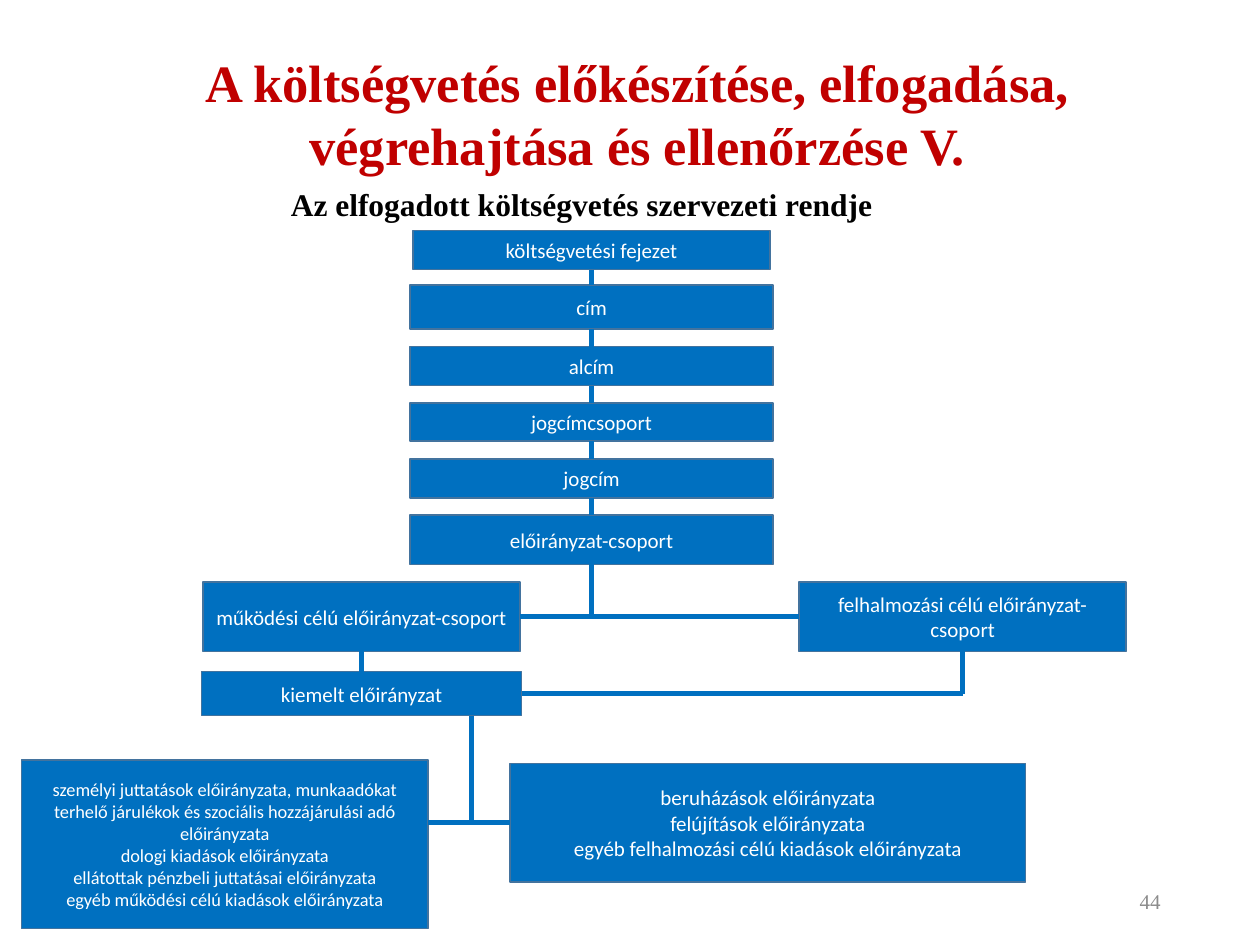
from collections import namedtuple
from itertools import pairwise

from lxml import etree
from pptx import Presentation
from pptx.dml.color import RGBColor
from pptx.enum.shapes import MSO_CONNECTOR, MSO_SHAPE
from pptx.enum.text import MSO_ANCHOR, PP_ALIGN
from pptx.oxml.ns import qn
from pptx.util import Inches, Pt

RECTANGLE = MSO_SHAPE.RECTANGLE
STRAIGHT = MSO_CONNECTOR.STRAIGHT
LEFT, CENTER, RIGHT = PP_ALIGN.LEFT, PP_ALIGN.CENTER, PP_ALIGN.RIGHT
TOP, MIDDLE = MSO_ANCHOR.TOP, MSO_ANCHOR.MIDDLE
TOP_SIDE, LEFT_SIDE, BOTTOM_SIDE, RIGHT_SIDE = range(4)

# The slide is a grid of 100 columns by 75 rows.
COLUMNS, ROWS = 100, 75
SLIDE_WIDTH, SLIDE_HEIGHT = Inches(10), Inches(7.5)
BLUE, EDGE, WHITE = "0070C0", "43739E", "FFFFFF"
RED, BLACK, GREY = "C00000", "000000", "8C8C8C"
SERIF, SANS = "Times New Roman", "Calibri"

LEVELS = [  # text, row in the chain, rows high, columns wide
    ("költségvetési fejezet", 0, 3.1, 28.3),
    ("cím", 4.3, 3.5, 28.8),
    ("alcím", 9.2, 3.1, 28.8),
    ("jogcímcsoport", 13.7, 3, 28.8),
    ("jogcím", 18.1, 3.1, 28.8),
    ("előirányzat-csoport", 22.6, 3.9, 28.8),
]
OPERATING_ITEMS = [
    "személyi juttatások előirányzata, munkaadókat terhelő járulékok "
    "és szociális hozzájárulási adó előirányzata",
    "dologi kiadások előirányzata",
    "ellátottak pénzbeli juttatásai előirányzata",
    "egyéb működési célú kiadások előirányzata",
]
CAPITAL_ITEMS = [
    "beruházások előirányzata",
    "felújítások előirányzata",
    "egyéb felhalmozási célú kiadások előirányzata",
]


class Box(namedtuple("Box", "left top width height")):
    def inner(self, left, top, width, height):
        return Box(self.left + left, self.top + top, width, height)

    def emu(self):
        return (across(self.left), down(self.top),
                across(self.width), down(self.height))


def across(columns):
    return round(SLIDE_WIDTH * columns / COLUMNS)


def down(rows):
    return round(SLIDE_HEIGHT * rows / ROWS)


def color(value):
    return RGBColor.from_string(value)


def write(shape, lines, size, font, ink, align, anchor, bold=False):
    frame = shape.text_frame
    frame.word_wrap = True
    frame.vertical_anchor = anchor
    frame.text = "\n".join(lines)
    for para in frame.paragraphs:
        para.alignment = align
        for span in para.runs:
            span.font.name = font
            span.font.size = Pt(size)
            span.font.bold = bold
            span.font.color.rgb = color(ink)


def add_label(page, box, text, size, ink, align, anchor=TOP, bold=True):
    shape = page.shapes.add_textbox(*box.emu())
    write(shape, [text], size, SERIF, ink, align, anchor, bold)


def add_node(page, box, lines, size=12):
    shape = page.shapes.add_shape(RECTANGLE, *box.emu())
    shape.shadow.inherit = False
    shape.fill.solid()
    shape.fill.fore_color.rgb = color(BLUE)
    shape.line.color.rgb = color(EDGE)
    shape.line.width = Pt(1)
    write(shape, lines, size, SANS, WHITE, CENTER, MIDDLE)
    return shape


def add_link(page, start, end):
    """Each end is a (shape, side) pair or an (x, y) point in EMU."""
    points = [(0, 0) if hasattr(place[0], "shape_id") else place
              for place in (start, end)]
    link = page.shapes.add_connector(STRAIGHT, *points[0], *points[1])
    for place, join in ((start, link.begin_connect), (end, link.end_connect)):
        if hasattr(place[0], "shape_id"):
            join(*place)
    link.line.color.rgb = color(BLUE)
    link.line.width = Pt(3)
    etree.SubElement(link._element.spPr, qn("a:effectLst"))


def middle_row(shape):
    return shape.top + shape.height // 2


def middle_column(shape):
    return shape.left + shape.width // 2


def add_heading(page, box):
    add_label(page, box.inner(7.5, 10.7, 54.3, 4),
              "Az elfogadott költségvetés szervezeti rendje", 18, BLACK, LEFT)
    add_label(page, box,
              "A költségvetés előkészítése, elfogadása, "
              "végrehajtása és ellenőrzése V.", 30, RED, CENTER)


def add_chain(page, box):
    nodes = [
        add_node(page, box.inner((box.width - width) / 2, row, width, height),
                 [text])
        for text, row, height, width in LEVELS
    ]
    for upper, lower in pairwise(nodes):
        add_link(page, (upper, BOTTOM_SIDE), (lower, TOP_SIDE))
    return nodes[-1]


def add_branches(page, box, parent):
    operating = add_node(page, box.inner(0.1, 0, 25.2, 5.5),
                         ["működési célú előirányzat-csoport"])
    capital = add_node(page, box.inner(47.4, 0, 26, 5.5),
                       ["felhalmozási célú előirányzat-csoport"])
    priority = add_node(page, box.inner(0, 7.1, 25.4, 3.5),
                        ["kiemelt előirányzat"])
    corner = (middle_column(capital), middle_row(priority))
    add_link(page, (operating, RIGHT_SIDE), (capital, LEFT_SIDE))
    add_link(page, (parent, BOTTOM_SIDE),
             (middle_column(parent), middle_row(operating)))
    add_link(page, (operating, BOTTOM_SIDE), (priority, TOP_SIDE))
    add_link(page, (priority, RIGHT_SIDE), corner)
    add_link(page, corner, (capital, BOTTOM_SIDE))
    return priority


def add_details(page, box, parent):
    operating = add_node(page, box.inner(0, 0, 32.3, 13.4),
                         OPERATING_ITEMS, 10.5)
    capital = add_node(page, box.inner(38.8, 0.3, 40.9, 9.4), CAPITAL_ITEMS)
    edge = operating.left + operating.width
    row = middle_row(capital)
    trunk = across(box.left + 35.7)
    add_link(page, (trunk, parent.top + parent.height), (trunk, row))
    add_link(page, (edge, row), (capital, LEFT_SIDE))


def main():
    deck = Presentation()
    deck.slide_width, deck.slide_height = SLIDE_WIDTH, SLIDE_HEIGHT
    page = deck.slides.add_slide(deck.slide_layouts[6])
    add_label(page, Box(70.6, 69.5, 22.5, 4), "44", 12, GREY, RIGHT,
              MIDDLE, bold=False)
    group = add_chain(page, Box(32.55, 18.3, 28.8, 26.5))
    priority = add_branches(page, Box(16, 46.2, 73.4, 10.6), group)
    add_details(page, Box(1.7, 60.3, 79.7, 13.4), priority)
    add_heading(page, Box(14.6, 3.5, 72, 15.8))
    deck.save("out.pptx")


if __name__ == "__main__":
    main()
